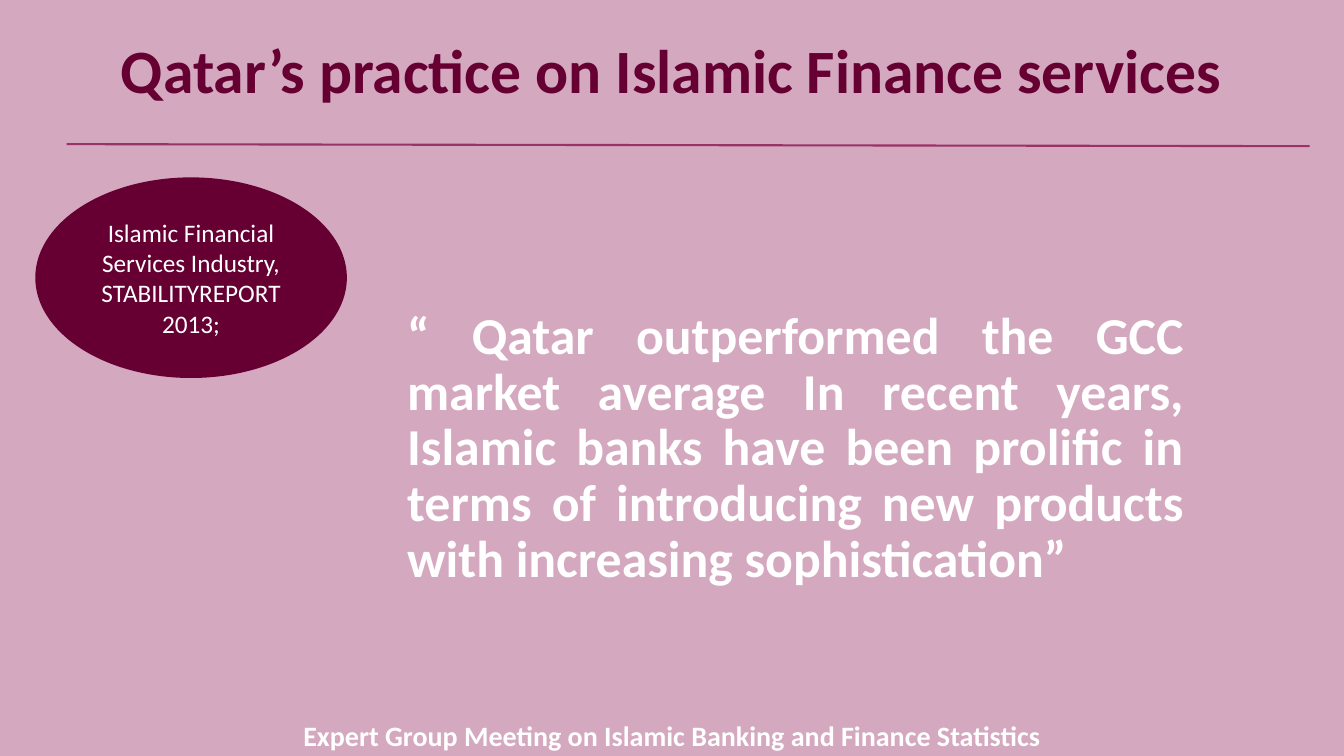
from dataclasses import dataclass

from pptx import Presentation
from pptx.dml.color import RGBColor
from pptx.enum.shapes import MSO_CONNECTOR, MSO_SHAPE
from pptx.enum.text import MSO_ANCHOR, PP_ALIGN
from pptx.oxml.ns import qn
from pptx.util import Inches, Pt


@dataclass(frozen=True)
class Theme:
    """Colours, font and type sizes of the slide."""
    back: str = "D4A8BE"
    dark: str = "660033"
    rule: str = "993366"
    light: str = "FFFFFF"
    font: str = "Calibri"
    title: int = 44
    quote: int = 37
    badge: int = 18
    foot: int = 20


THEME = Theme()


def color(code):
    """Return the colour for a hex code."""
    return RGBColor.from_string(code)


def write(shape, text, size, tint, bold=True, align=PP_ALIGN.CENTER,
          anchor=MSO_ANCHOR.MIDDLE, space=1.0):
    """Put one styled paragraph into a shape."""
    frame = shape.text_frame
    frame.word_wrap = True
    frame.vertical_anchor = anchor
    para = frame.paragraphs[0]
    para.alignment = align
    para.line_spacing = space
    run = para.add_run()
    run.text = text
    run.font.name = THEME.font
    run.font.size = Pt(size)
    run.font.bold = bold
    run.font.color.rgb = color(tint)


def add_title(slide, x, y, w, h):
    """Place the heading and the rule along its lower edge."""
    box = slide.shapes.add_textbox(Inches(x), Inches(y), Inches(w), Inches(h))
    write(box, "Qatar’s practice on Islamic Finance services",
          THEME.title, THEME.dark, space=0.9)
    line = slide.shapes.add_connector(
        MSO_CONNECTOR.STRAIGHT, Inches(x + 0.66), Inches(y + h - 0.02),
        Inches(x + w - 0.34), Inches(y + h))
    line.line.color.rgb = color(THEME.rule)
    line.line.width = Pt(1.5)
    props = line._element.spPr
    props.append(props.makeelement(qn("a:effectLst"), {}))


def add_quote(slide, x, y, w, h):
    """Place the justified quotation."""
    box = slide.shapes.add_textbox(Inches(x), Inches(y), Inches(w), Inches(h))
    write(box, "“ Qatar outperformed the GCC market average In recent years, "
          "Islamic banks have been prolific in terms of introducing new "
          "products with increasing sophistication”",
          THEME.quote, THEME.light, align=PP_ALIGN.JUSTIFY,
          anchor=MSO_ANCHOR.TOP, space=0.9)


def add_badge(slide, x, y, w, h):
    """Place the oval that names the report."""
    oval = slide.shapes.add_shape(
        MSO_SHAPE.OVAL, Inches(x), Inches(y), Inches(w), Inches(h))
    oval.shadow.inherit = False
    oval.fill.solid()
    oval.fill.fore_color.rgb = color(THEME.dark)
    oval.line.fill.background()
    write(oval, "Islamic Financial Services Industry, STABILITYREPORT 2013;",
          THEME.badge, THEME.light, bold=False)


def add_foot(slide, x, y, w, h):
    """Place the name of the meeting."""
    box = slide.shapes.add_textbox(Inches(x), Inches(y), Inches(w), Inches(h))
    write(box, "Expert Group Meeting on Islamic Banking and Finance Statistics",
          THEME.foot, THEME.light, anchor=MSO_ANCHOR.TOP)


def main():
    """Build and save the slide."""
    deck = Presentation()
    deck.slide_width, deck.slide_height = Inches(13.33), Inches(7.5)
    slide = deck.slides.add_slide(deck.slide_layouts[6])
    fill = slide.background.fill
    fill.solid()
    fill.fore_color.rgb = color(THEME.back)
    add_title(slide, 0, 0, 13.33, 1.45)
    add_quote(slide, 3.94, 3.02, 7.9, 3.02)
    add_badge(slide, 0.35, 1.76, 3.09, 1.99)
    add_foot(slide, 0, 7.08, 13.33, 0.42)
    deck.save("out.pptx")


if __name__ == "__main__":
    main()
